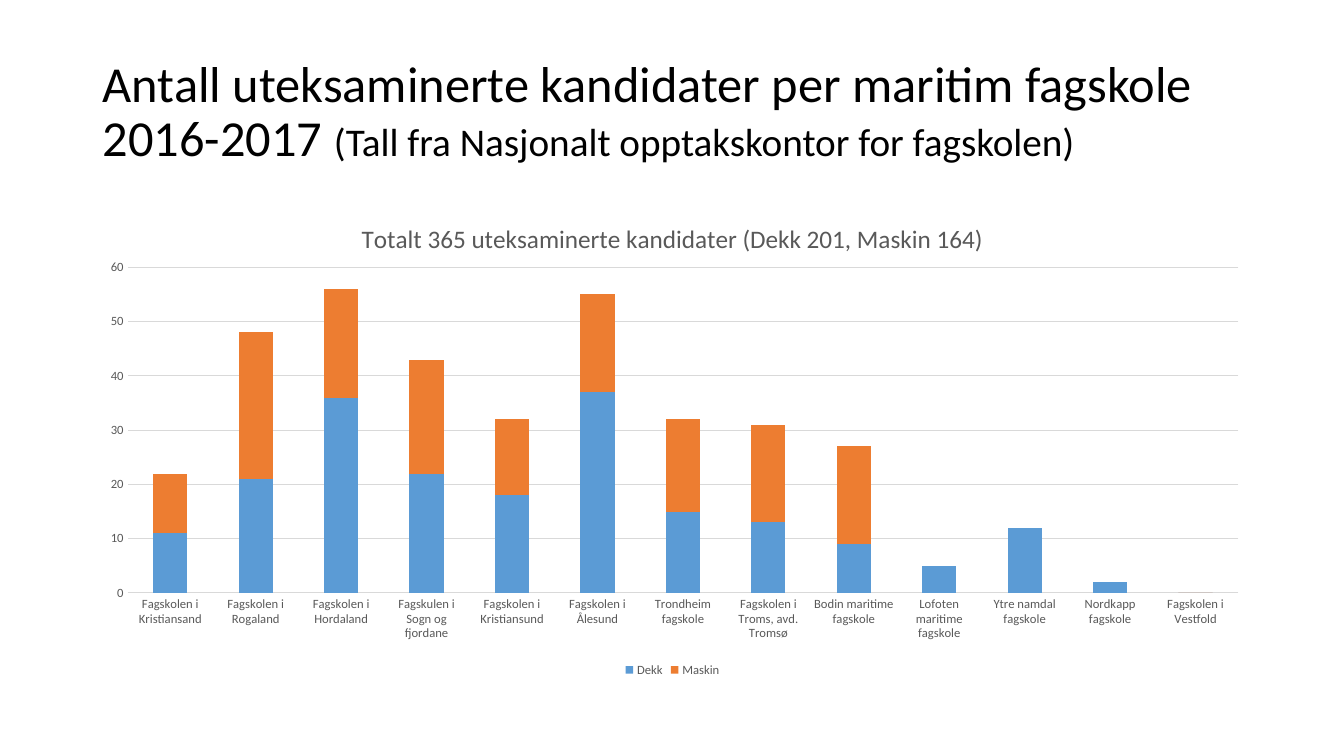
from pptx import Presentation
from pptx.chart.data import CategoryChartData
from pptx.dml.color import RGBColor
from pptx.enum.chart import XL_CHART_TYPE, XL_LEGEND_POSITION, XL_TICK_MARK
from pptx.enum.text import MSO_ANCHOR
from pptx.oxml import parse_xml
from pptx.oxml.ns import nsdecls
from pptx.util import Inches, Pt

FONT = "Calibri"
BLACK, GREY, LIGHT_GREY = "000000", "595959", "D9D9D9"
TITLE_SPANS = [
    ("Antall uteksaminerte kandidater per maritim fagskole 2016-2017 ", 36),
    ("(Tall fra Nasjonalt opptakskontor for fagskolen)", 28),
]
CHART_TITLE = "Totalt 365 uteksaminerte kandidater (Dekk 201, Maskin 164)"
CANDIDATES = [
    ("Fagskolen i Kristiansand", 11, 11),
    ("Fagskolen i Rogaland", 21, 27),
    ("Fagskolen i Hordaland", 36, 20),
    ("Fagskulen i Sogn og fjordane", 22, 21),
    ("Fagskolen i Kristiansund", 18, 14),
    ("Fagskolen i Ålesund", 37, 18),
    ("Trondheim fagskole", 15, 17),
    ("Fagskolen i Troms, avd. Tromsø", 13, 18),
    ("Bodin maritime fagskole", 9, 18),
    ("Lofoten maritime fagskole", 5, 0),
    ("Ytre namdal fagskole", 12, 0),
    ("Nordkapp fagskole", 2, 0),
    ("Fagskolen i Vestfold", 0, 0),
]
SERIES_COLORS = {"Dekk": "5B9BD5", "Maskin": "ED7D31"}
PLOT_AREA = {"x": 0.03, "y": 0.137, "w": 0.958, "h": 0.679}


def color(hex_value):
    return RGBColor.from_string(hex_value)


def set_values(target, values):
    for name, value in values.items():
        setattr(target, name, value)


def style_font(font, size, hex_value):
    set_values(font, {"name": FONT, "size": Pt(size), "bold": False})
    font.color.rgb = color(hex_value)


def style_line(line, hex_value):
    line.color.rgb = color(hex_value)
    line.width = Pt(0.75)


def add_title(page, box):
    frame = page.shapes.add_textbox(*map(Inches, box)).text_frame
    set_values(frame, {"word_wrap": True, "vertical_anchor": MSO_ANCHOR.MIDDLE})
    para = frame.paragraphs[0]
    para.line_spacing = 0.9
    for text, size in TITLE_SPANS:
        span = para.add_run()
        span.text = text
        style_font(span.font, size, BLACK)


def place_plot(chart, fractions):
    """Fix the inner plot area, given as fractions of the chart."""
    modes = '<c:xMode val="edge"/><c:yMode val="edge"/>'
    sizes = "".join(f'<c:{name} val="{value}"/>' for name, value in fractions.items())
    layout = parse_xml(
        f'<c:layout {nsdecls("c")}><c:manualLayout><c:layoutTarget val="inner"/>'
        f"{modes}{sizes}</c:manualLayout></c:layout>"
    )
    plot_area = chart._chartSpace.chart.plotArea
    for old in plot_area.findall(layout.tag):
        plot_area.remove(old)
    plot_area.insert(0, layout)


def style_axes(chart):
    for axis in (chart.category_axis, chart.value_axis):
        set_values(axis, {"major_tick_mark": XL_TICK_MARK.NONE,
                          "minor_tick_mark": XL_TICK_MARK.NONE})
        style_font(axis.tick_labels.font, 9, GREY)
    style_line(chart.category_axis.format.line, LIGHT_GREY)
    values = chart.value_axis
    set_values(values, {"minimum_scale": 0, "maximum_scale": 60, "major_unit": 10,
                        "has_major_gridlines": True})
    values.format.line.fill.background()
    style_line(values.major_gridlines.format.line, LIGHT_GREY)


def add_candidate_chart(page, box):
    schools, *columns = zip(*CANDIDATES)
    data = CategoryChartData()
    data.categories = schools
    for name, values in zip(SERIES_COLORS, columns):
        data.add_series(name, values)
    chart = page.shapes.add_chart(
        XL_CHART_TYPE.COLUMN_STACKED, *map(Inches, box), data).chart
    style_font(chart.font, 10, BLACK)

    chart.has_title = True
    para = chart.chart_title.text_frame.paragraphs[0]
    span = para.add_run()
    span.text = CHART_TITLE
    style_font(span.font, 18, GREY)

    chart.has_legend = True
    set_values(chart.legend, {"position": XL_LEGEND_POSITION.BOTTOM,
                              "include_in_layout": False})
    style_font(chart.legend.font, 9, GREY)

    plot = chart.plots[0]
    set_values(plot, {"gap_width": 150, "overlap": 100, "vary_by_categories": False})
    for series in plot.series:
        series.format.fill.solid()
        series.format.fill.fore_color.rgb = color(SERIES_COLORS[series.name])
    style_axes(chart)
    place_plot(chart, PLOT_AREA)


def main():
    deck = Presentation()
    set_values(deck, {"slide_width": Inches(13.33), "slide_height": Inches(7.5)})
    page = deck.slides.add_slide(deck.slide_layouts[6])
    add_title(page, (0.92, 0.4, 11.7, 1.45))
    add_candidate_chart(page, (0.92, 2, 11.5, 4.76))
    deck.save("out.pptx")


if __name__ == "__main__":
    main()
